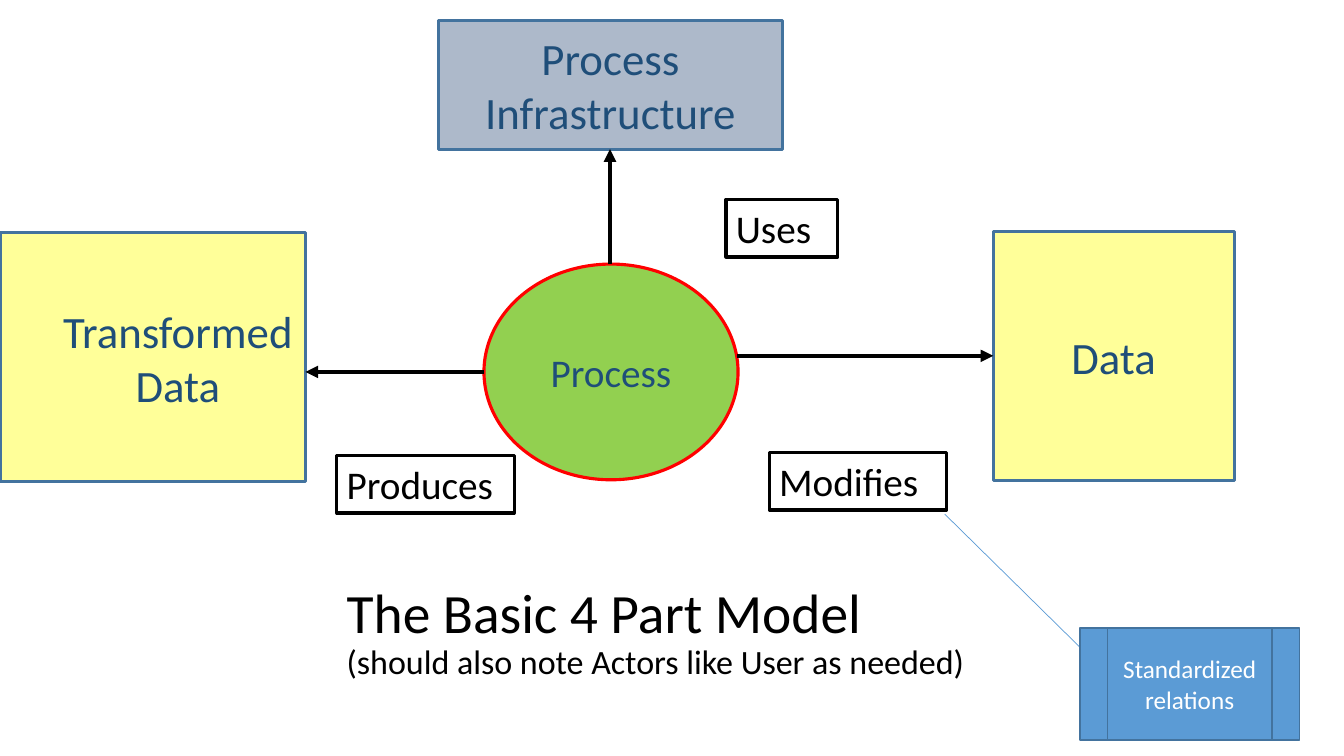
from lxml.etree import SubElement
from pptx import Presentation
from pptx.dml.color import RGBColor
from pptx.enum.shapes import MSO_CONNECTOR, MSO_SHAPE
from pptx.enum.text import MSO_ANCHOR, MSO_AUTO_SIZE, PP_ALIGN
from pptx.oxml.ns import qn
from pptx.util import Inches, Pt

FONT = "Calibri"
BLACK = RGBColor(0x00, 0x00, 0x00)
WHITE = RGBColor(0xFF, 0xFF, 0xFF)
NAVY = RGBColor(0x1F, 0x4E, 0x79)
STEEL = RGBColor(0x43, 0x73, 0x9E)
BLUE = RGBColor(0x5B, 0x9B, 0xD5)
GREY_BLUE = RGBColor(0xAD, 0xB9, 0xCA)
YELLOW = RGBColor(0xFF, 0xFF, 0x99)
GREEN = RGBColor(0x92, 0xD0, 0x50)
RED = RGBColor(0xFF, 0x00, 0x00)


def add_run(paragraph, text, size, color):
    run = paragraph.add_run()
    run.text = text
    run.font.name = FONT
    run.font.size = Pt(size)
    run.font.color.rgb = color


def add_node(slide, kind, box, lines, fill, outline=STEEL, width=2.25,
             size=32, color=NAVY, level=0):
    """Add a filled shape with one centred paragraph per line."""
    shape = slide.shapes.add_shape(kind, *map(Inches, box))
    shape.shadow.inherit = False
    shape.fill.solid()
    shape.fill.fore_color.rgb = fill
    shape.line.color.rgb = outline
    shape.line.width = Pt(width)
    frame = shape.text_frame
    frame.word_wrap = True
    frame.vertical_anchor = MSO_ANCHOR.MIDDLE
    for index, line in enumerate(lines):
        paragraph = frame.add_paragraph() if index else frame.paragraphs[0]
        paragraph.alignment = PP_ALIGN.CENTER
        if level:
            paragraph.level = level
            paragraph._p.get_or_add_pPr().set("marL", str(Inches(0.5 * level)))
        add_run(paragraph, line, size, color)


def add_relation_label(slide, left, top, width, text):
    label = slide.shapes.add_textbox(
        Inches(left), Inches(top), Inches(width), Inches(0.57))
    label.line.color.rgb = BLACK
    label.line.width = Pt(2.25)
    frame = label.text_frame
    frame.word_wrap = True
    frame.auto_size = MSO_AUTO_SIZE.SHAPE_TO_FIT_TEXT
    add_run(frame.paragraphs[0], text, 28, BLACK)


def add_line(slide, start, end, color=BLACK, width=3, arrow=True):
    connector = slide.shapes.add_connector(
        MSO_CONNECTOR.STRAIGHT, *map(Inches, start + end))
    connector.line.color.rgb = color
    connector.line.width = Pt(width)
    if arrow:
        SubElement(connector.line._get_or_add_ln(), qn("a:tailEnd"), type="triangle")
    SubElement(connector._element.spPr, qn("a:effectLst"))


def add_title(slide):
    title = slide.shapes.add_textbox(
        Inches(3.34), Inches(5.59), Inches(6.62), Inches(1.4))
    frame = title.text_frame
    frame.word_wrap = True
    frame.vertical_anchor = MSO_ANCHOR.MIDDLE
    paragraph = frame.paragraphs[0]
    paragraph.line_spacing = 0.9
    add_run(paragraph, "The Basic 4 Part Model", 39.6, BLACK)
    paragraph.add_line_break()
    add_run(paragraph, "(should also note Actors like User as needed)", 24.3, BLACK)


def main():
    presentation = Presentation()
    presentation.slide_width = Inches(13.33)
    presentation.slide_height = Inches(7.5)
    slide = presentation.slides.add_slide(presentation.slide_layouts[6])

    add_title(slide)
    add_node(slide, MSO_SHAPE.RECTANGLE, (9.85, 2.3, 2.39, 2.47), ["Data"], YELLOW)
    add_node(slide, MSO_SHAPE.RECTANGLE, (4.35, 0.2, 3.41, 1.28),
             ["Process", "Infrastructure"], GREY_BLUE)
    add_node(slide, MSO_SHAPE.OVAL, (4.8, 2.62, 2.52, 2.14), ["Process"], GREEN,
             outline=RED, size=28)
    add_node(slide, MSO_SHAPE.RECTANGLE, (0, 2.31, 3.03, 2.47),
             ["Transformed", "Data"], YELLOW, level=1)

    add_line(slide, (7.31, 3.53), (9.85, 3.53))
    add_line(slide, (4.8, 3.69), (3.03, 3.69))
    add_line(slide, (6.05, 2.62), (6.05, 1.48))

    add_relation_label(slide, 7.2, 1.98, 1.11, "Uses")
    add_relation_label(slide, 7.63, 4.49, 1.76, "Modifies")
    add_relation_label(slide, 3.34, 4.52, 1.76, "Produces")

    add_line(slide, (9.37, 5.1), (10.71, 6.42), BLUE, 0.5, arrow=False)
    add_node(slide, MSO_SHAPE.FLOWCHART_PREDEFINED_PROCESS, (10.71, 6.23, 2.18, 1.11),
             ["Standardized relations"], BLUE, width=1, size=18, color=WHITE)

    presentation.save("out.pptx")


if __name__ == "__main__":
    main()
